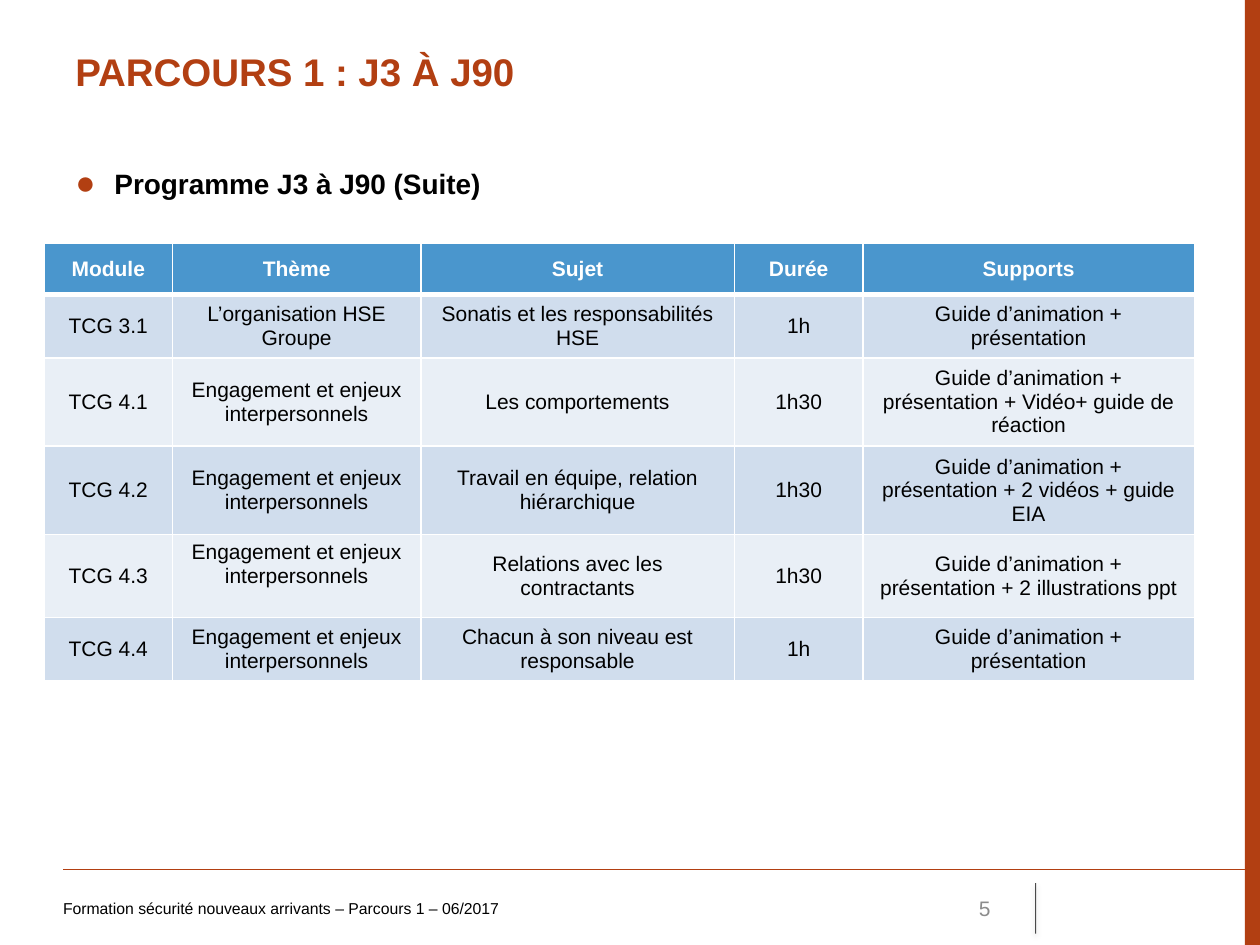
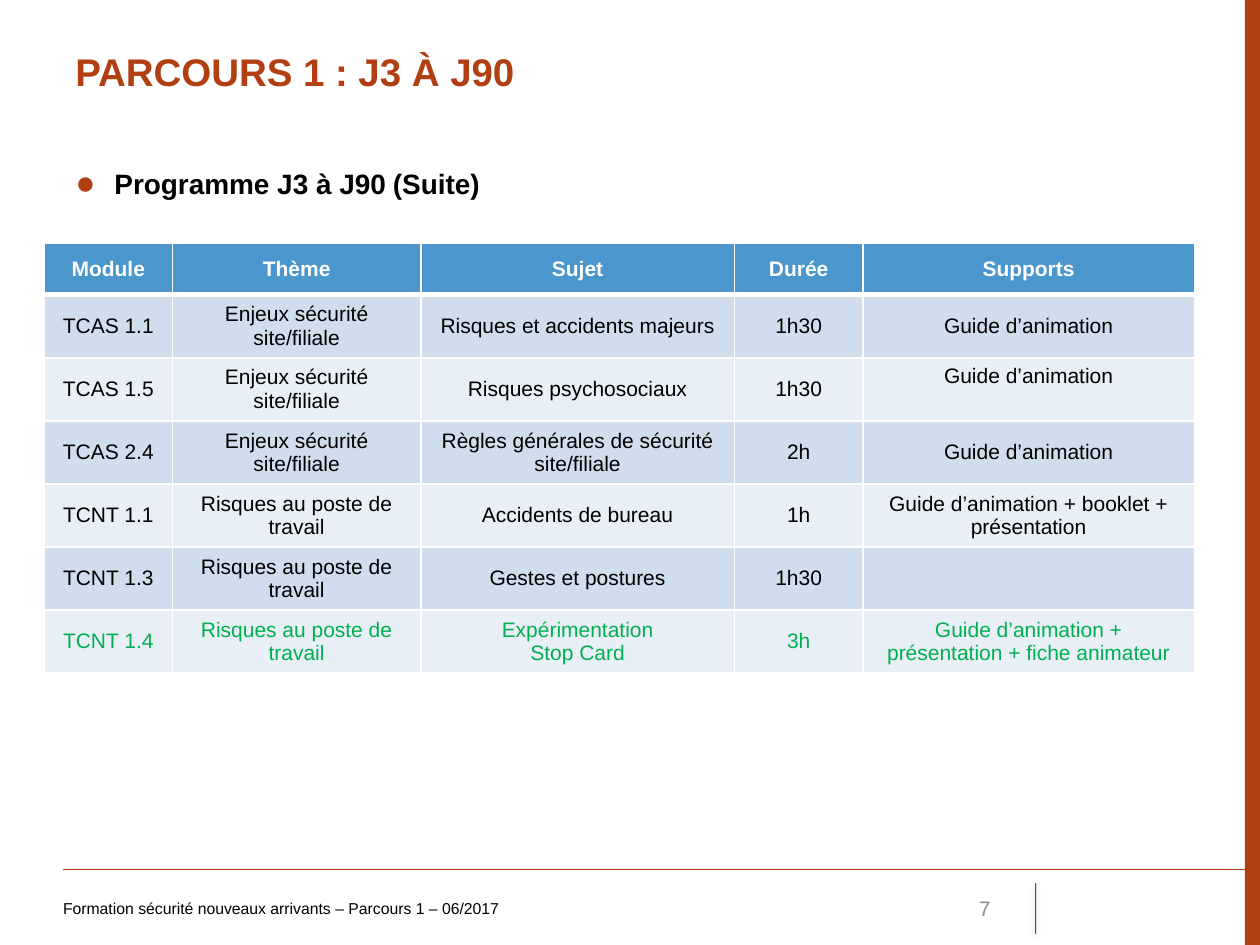
import pptx
import pptx.util
import pptx.dml.color
import pptx.enum.shapes
import pptx.enum.text
import pptx.oxml
import pptx.oxml.ns

Inches = pptx.util.Inches
Pt = pptx.util.Pt
ALIGN = pptx.enum.text.PP_ALIGN
ANCHOR = pptx.enum.text.MSO_ANCHOR

FONT = "Arial"
COLORS = {
    "accent": "B23F12",
    "text": "000000",
    "page": "8C8C8C",
    "white": "FFFFFF",
    "header": "4A96CD",
    "odd_row": "D0DDED",
    "even_row": "E9EFF6",
    "highlight": "00B050",
}
TITLE = "PARCOURS 1 : J3 À J90"
FOOTER = "Formation sécurité nouveaux arrivants – Parcours 1 – 06/2017"
HEADERS = ["Module", "Thème", "Sujet", "Durée", "Supports"]
COLUMN_WIDTHS = [1.02, 1.97, 2.49, 1.02, 2.63]
HEADER_HEIGHT = 0.41
ROW_HEIGHTS = {2: 0.47, 3: 0.66}

ENGAGEMENT = "Engagement et enjeux interpersonnels"
SITE = "Enjeux sécurité site/filiale"
WORKPLACE = "Risques au poste de travail"
GUIDE = "Guide d’animation"
GUIDE_SLIDES = GUIDE + " + présentation"

PROGRAMMES = [
    {
        "page": "5",
        "heading": [("Programme J3 à J90 (Suite)", 16)],
        "rows": [
            ["TCG 3.1", "L’organisation HSE Groupe", "Sonatis et les responsabilités HSE", "1h", GUIDE_SLIDES],
            ["TCG 4.1", ENGAGEMENT, "Les comportements", "1h30", GUIDE_SLIDES + " + Vidéo+ guide de réaction"],
            ["TCG 4.2", ENGAGEMENT, "Travail en équipe, relation hiérarchique", "1h30",
             GUIDE_SLIDES + " + 2 vidéos + guide EIA"],
            ["TCG 4.3", ENGAGEMENT, "Relations avec les contractants", "1h30", GUIDE_SLIDES + " + 2 illustrations ppt"],
            ["TCG 4.4", ENGAGEMENT, "Chacun à son niveau est responsable", "1h", GUIDE_SLIDES],
        ],
        "line_counts": [2, 3, 3, 3, 2],
        "top_cell": (4, 1),
        "highlighted_row": None,
    },
    {
        "page": "7",
        "heading": [("Programme J3 à J90", 16), (" ", 14), ("(Suite)", 16)],
        "rows": [
            ["TCAS 1.1", SITE, "Risques et accidents majeurs", "1h30", GUIDE],
            ["TCAS 1.5", SITE, "Risques psychosociaux", "1h30", GUIDE],
            ["TCAS 2.4", SITE, "Règles générales de sécurité site/filiale", "2h", GUIDE],
            ["TCNT 1.1", WORKPLACE, "Accidents de bureau", "1h", GUIDE + " + booklet + présentation"],
            ["TCNT 1.3", WORKPLACE, "Gestes et postures", "1h30", ""],
            ["TCNT 1.4", WORKPLACE, "Expérimentation\nStop Card", "3h", GUIDE_SLIDES + " + fiche animateur"],
        ],
        "line_counts": [2] * 6,
        "top_cell": (2, 4),
        "highlighted_row": 6,
    },
]


def rgb(name):
    return pptx.dml.color.RGBColor.from_string(COLORS[name])


def add_xml(parent, markup):
    namespace = pptx.oxml.ns.nsdecls("a")
    tag, rest = markup[1:].split(">", 1)
    closed = tag.endswith("/")
    opening = f"<{tag.rstrip('/')} {namespace}" + ("/>" if closed else ">")
    parent.append(pptx.oxml.parse_xml(opening + rest))


def add_run(paragraph, text, size, color, bold=False):
    run = paragraph.add_run()
    run.text = text
    run.font.name = FONT
    run.font.size = Pt(size)
    run.font.bold = bold
    run.font.color.rgb = rgb(color)


def add_text_box(slide, left, top, width, height, anchor=ANCHOR.MIDDLE, left_inset=0.1, top_inset=0.05):
    shape = slide.shapes.add_textbox(Inches(left), Inches(top), Inches(width), Inches(height))
    frame = shape.text_frame
    frame.word_wrap = True
    frame.vertical_anchor = anchor
    frame.margin_left = Inches(left_inset)
    frame.margin_top = Inches(top_inset)
    return frame.paragraphs[0]


def add_line(slide, start, end, color, width, effects="<a:effectLst/>"):
    connector = slide.shapes.add_connector(
        pptx.enum.shapes.MSO_CONNECTOR.STRAIGHT, *[Inches(value) for value in start + end])
    connector.line.color.rgb = rgb(color)
    connector.line.width = Pt(width)
    add_xml(connector._element.spPr, effects)
    return connector


def add_band(slide):
    band = slide.shapes.add_shape(
        pptx.enum.shapes.MSO_SHAPE.RECTANGLE, Inches(9.88), 0, Inches(0.12), Inches(7.5))
    band.shadow.inherit = False
    band.fill.solid()
    band.fill.fore_color.rgb = rgb("accent")
    band.line.fill.background()


def add_footer(slide, page):
    add_line(slide, (0.5, 6.9), (10, 6.9), "accent", 0.75)
    shadow = (
        '<a:effectLst><a:outerShdw blurRad="39370" dist="20320" dir="5400000" rotWithShape="0">'
        '<a:srgbClr val="000000"><a:alpha val="38000"/></a:srgbClr></a:outerShdw></a:effectLst>')
    divider = add_line(slide, (8.22, 7.01), (8.22, 7.41), "text", 0.5, shadow)
    color = divider._element.spPr.find(".//" + pptx.oxml.ns.qn("a:ln")).find(".//" + pptx.oxml.ns.qn("a:srgbClr"))
    add_xml(color, '<a:alpha val="70000"/>')
    add_run(add_text_box(slide, 0.5, 7.01, 6.08, 0.4, left_inset=0), FOOTER, 9, "text")
    number = add_text_box(slide, 7.17, 7.01, 0.79, 0.4)
    number.alignment = ALIGN.RIGHT
    add_run(number, page, 12, "page")


def add_heading(slide, runs):
    paragraph = add_text_box(slide, 0.5, 1.23, 8.99, 0.47, ANCHOR.TOP, top_inset=0.09)
    properties = paragraph._p.get_or_add_pPr()
    indent = Inches(0.31)
    properties.set("marL", str(indent))
    properties.set("indent", str(-indent))
    add_xml(properties, f'<a:buClr><a:srgbClr val="{COLORS["accent"]}"/></a:buClr>')
    add_xml(properties, '<a:buSzPct val="120000"/>')
    add_xml(properties, f'<a:buFont typeface="{FONT}"/>')
    add_xml(properties, '<a:buChar char="●"/>')
    for text, size in runs:
        add_run(paragraph, text, size, "text", True)


def set_borders(cell, bottom_width):
    properties = cell._tc.get_or_add_tcPr()
    for side, width in (("L", 1), ("R", 1), ("T", 1), ("B", bottom_width)):
        add_xml(properties, f'<a:ln{side} w="{Pt(width)}"><a:solidFill><a:srgbClr val="{COLORS["white"]}"/>'
                            f'</a:solidFill></a:ln{side}>')


def fill_cell(cell, text, fill, color, is_header, anchor):
    set_borders(cell, 3 if is_header else 1)
    cell.fill.solid()
    cell.fill.fore_color.rgb = rgb(fill)
    cell.vertical_anchor = anchor
    frame = cell.text_frame
    for index, line in enumerate(text.split("\n")):
        paragraph = frame.add_paragraph() if index else frame.paragraphs[0]
        paragraph.alignment = ALIGN.CENTER
        if line:
            add_run(paragraph, line, 12, color, is_header)


def add_programme_table(slide, programme):
    rows = [HEADERS] + programme["rows"]
    heights = [HEADER_HEIGHT] + [ROW_HEIGHTS[count] for count in programme["line_counts"]]
    table = slide.shapes.add_table(
        len(rows), len(HEADERS), Inches(0.35), Inches(1.93),
        Inches(sum(COLUMN_WIDTHS)), Inches(sum(heights))).table
    for column, width in zip(table.columns, COLUMN_WIDTHS):
        column.width = Inches(width)
    for row_index, (texts, height) in enumerate(zip(rows, heights)):
        table.rows[row_index].height = Inches(height)
        is_header = row_index == 0
        if is_header:
            fill, color = "header", "white"
        else:
            fill = "odd_row" if row_index % 2 else "even_row"
            color = "highlight" if row_index == programme["highlighted_row"] else "text"
        for column_index, text in enumerate(texts):
            position = (row_index, column_index)
            anchor = ANCHOR.TOP if position == programme["top_cell"] else ANCHOR.MIDDLE
            fill_cell(table.cell(*position), text, fill, color, is_header, anchor)


def add_programme_slide(presentation, programme):
    slide = presentation.slides.add_slide(presentation.slide_layouts[6])
    add_band(slide)
    add_footer(slide, programme["page"])
    title = add_text_box(slide, 0.5, 0.3, 8.99, 0.69, ANCHOR.TOP, top_inset=0.08)
    add_run(title, TITLE, 22, "accent", True)
    add_heading(slide, programme["heading"])
    add_programme_table(slide, programme)


def main():
    presentation = pptx.Presentation()
    presentation.slide_width = Inches(10)
    presentation.slide_height = Inches(7.5)
    for programme in PROGRAMMES:
        add_programme_slide(presentation, programme)
    presentation.save("out.pptx")


if __name__ == "__main__":
    main()
